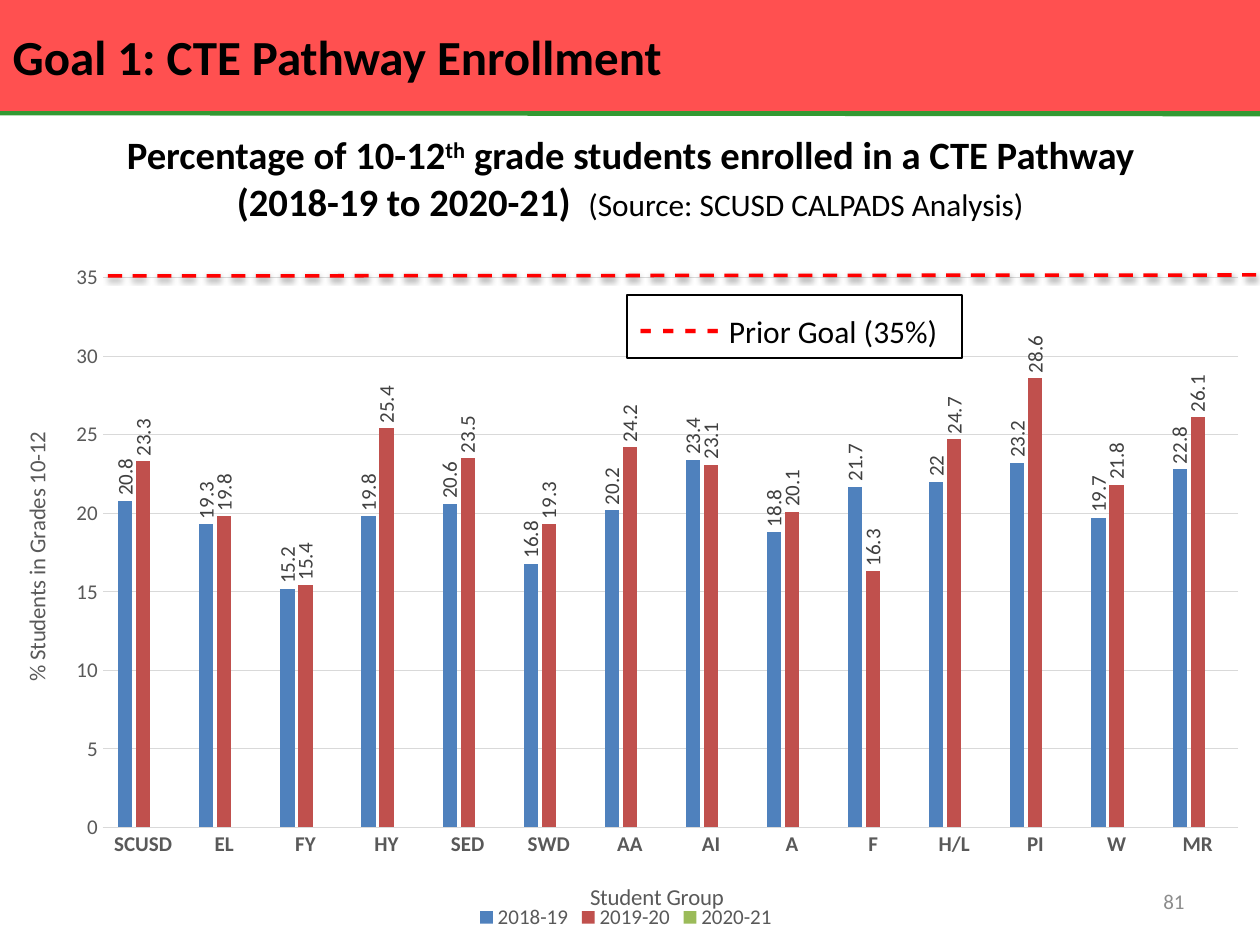
from lxml import etree
from pptx import Presentation
from pptx.chart.data import CategoryChartData
from pptx.dml.color import RGBColor
from pptx.enum.chart import XL_CHART_TYPE as CT, XL_LABEL_POSITION as LP
from pptx.enum.chart import XL_LEGEND_POSITION as LEG, XL_TICK_MARK as TM
from pptx.enum.dml import MSO_LINE
from pptx.enum.shapes import MSO_CONNECTOR as MC, MSO_SHAPE as MS
from pptx.enum.text import MSO_ANCHOR as MA, MSO_AUTO_SIZE as AS, PP_ALIGN as PA
from pptx.oxml import parse_xml
from pptx.oxml.ns import nsdecls, qn
from pptx.util import Pt

FONT = "Calibri"
TITLE = [[("Goal 1: CTE Pathway Enrollment", 28, "000000", True)]]
HEADING = [
    [("Percentage of 10-12", 22.1, "000000", True),
     ("th", 22.1, "000000", True, 30),
     (" grade students enrolled in a CTE Pathway", 22.1, "000000", True)],
    [("(2018-19 to 2020-21)  ", 22.1, "000000", True),
     ("(Source: SCUSD CALPADS Analysis)", 17.9, "000000", False)],
]
GOAL = [[("- - - - ", 24, "FF0000", True),
         ("Prior Goal (35%)", 18, "000000", False)]]
PAGE = [[("81", 12, "8C8C8C", False)]]
GROUPS = ["SCUSD", "EL", "FY", "HY", "SED", "SWD", "AA",
          "AI", "A", "F", "H/L", "PI", "W", "MR"]
YEARS = [
    ("2018-19", "4F81BD", [20.8, 19.3, 15.2, 19.8, 20.6, 16.8, 20.2,
                           23.4, 18.8, 21.7, 22, 23.2, 19.7, 22.8]),
    ("2019-20", "C0504D", [23.3, 19.8, 15.4, 25.4, 23.5, 19.3, 24.2,
                           23.1, 20.1, 16.3, 24.7, 28.6, 21.8, 26.1]),
    ("2020-21", "9BBB59", [None] * len(GROUPS)),
]
PLOT = (0.082, 0.077, 0.907, 0.772)


def px(n):
    return round(n * 914400 / 126)


def rgb(h):
    return RGBColor.from_string(h)


def style(font, size, color, bold=False):
    font.name, font.size, font.bold = FONT, Pt(size), bold
    font.color.rgb = rgb(color)


def write(tf, paras, align=PA.LEFT, anchor=MA.MIDDLE):
    tf.word_wrap, tf.auto_size, tf.vertical_anchor = True, AS.NONE, anchor
    for i, runs in enumerate(paras):
        p = tf.add_paragraph() if i else tf.paragraphs[0]
        p.alignment = align
        for text, size, color, bold, *base in runs:
            r = p.add_run()
            r.text = text
            style(r.font, size, color, bold)
            if base:
                r.font._element.set("baseline", str(base[0] * 1000))


def add_text(s, box, paras, align, anchor):
    write(s.shapes.add_textbox(*map(px, box)).text_frame, paras, align, anchor)


def add_line(s, ends, color, width):
    line = s.shapes.add_connector(MC.STRAIGHT, *map(px, ends))
    line.line.color.rgb, line.line.width = rgb(color), Pt(width)
    effects = etree.SubElement(line._element.spPr, qn("a:effectLst"))
    return line, effects


def layout(x, y, w=None, h=None):
    size = "" if w is None else f'<c:w val="{w}"/><c:h val="{h}"/>'
    inner = "" if w is None else '<c:layoutTarget val="inner"/>'
    return parse_xml(
        f'<c:layout {nsdecls("c")}><c:manualLayout>{inner}'
        '<c:xMode val="edge"/><c:yMode val="edge"/>'
        f'<c:x val="{x}"/><c:y val="{y}"/>{size}</c:manualLayout></c:layout>')


def set_layout(el, new, after=None):
    for old in el.findall(qn("c:layout")):
        el.remove(old)
    if after is None:
        el.insert(0, new)
    else:
        el.find(qn(after)).addnext(new)


def format_axis(axis, title, x, y, bold=False):
    axis.major_tick_mark = axis.minor_tick_mark = TM.NONE
    style(axis.tick_labels.font, 12, "595959", bold)
    tf = axis.axis_title.text_frame
    r = tf.paragraphs[0].add_run()
    r.text = title
    style(r.font, 13, "595959")
    set_layout(axis.axis_title._element, layout(x, y), "c:tx")
    return tf


def add_chart(s, box):
    data = CategoryChartData()
    data.categories = GROUPS
    for name, _, vals in YEARS:
        data.add_series(name, vals)
    chart = s.shapes.add_chart(CT.COLUMN_CLUSTERED, *map(px, box), data).chart
    chart.has_title = False
    style(chart.font, 10, "000000")
    chart.has_legend = True
    chart.legend.position, chart.legend.include_in_layout = LEG.BOTTOM, False
    style(chart.legend.font, 12, "595959")

    plot = chart.plots[0]
    plot.gap_width, plot.overlap, plot.vary_by_categories = 219, -27, False
    for ser, (_, color, _) in zip(plot.series, YEARS):
        ser.format.fill.solid()
        ser.format.fill.fore_color.rgb = rgb(color)
        labels = ser.data_labels
        labels.show_value, labels.position = True, LP.OUTSIDE_END
        style(labels.font, 12, "404040")
        body = labels._element.find(qn("c:txPr")).find(qn("a:bodyPr"))
        body.set("rot", "-5400000")
        body.set("vert", "horz")

    cat, val = chart.category_axis, chart.value_axis
    format_axis(cat, "Student Group", 0.468, 0.92, True)
    cat.format.line.color.rgb, cat.format.line.width = rgb("D9D9D9"), Pt(0.75)
    tf = format_axis(val, "% Students in Grades 10-12", 0.014, 0.288)
    tf._element.find(qn("a:bodyPr")).set("rot", "-5400000")
    val.minimum_scale, val.maximum_scale, val.major_unit = 0, 35, 5
    val.format.line.fill.background()
    grid = val.major_gridlines.format.line
    grid.color.rgb, grid.width = rgb("D9D9D9"), Pt(0.75)
    set_layout(chart._chartSpace.chart.plotArea, layout(*PLOT))


def main():
    prs = Presentation()
    prs.slide_width, prs.slide_height = px(1260), px(945)
    s = prs.slides.add_slide(prs.slide_layouts[5])

    rule, _ = add_line(s, (0, 111, 1260, 112), "339933", 5)
    title = s.shapes.title
    title._element.addprevious(rule._element)
    title.left, title.top, title.width, title.height = map(px, (0, 0, 1260, 111))
    title.fill.solid()
    title.fill.fore_color.rgb = rgb("FF5050")
    write(title.text_frame, TITLE)

    add_text(s, (903, 876, 294, 50), PAGE, PA.RIGHT, MA.MIDDLE)
    add_text(s, (20, 125, 1221, 92), HEADING, PA.CENTER, MA.TOP)
    add_chart(s, (0, 223, 1252, 712))

    goal, effects = add_line(s, (108, 276, 1260, 275), "FF0000", 2)
    goal.line.dash_style = MSO_LINE.DASH
    effects.append(parse_xml(
        f'<a:outerShdw {nsdecls("a")} blurRad="{Pt(3.1)}" dist="{Pt(1.6)}" '
        'dir="5400000" rotWithShape="0"><a:srgbClr val="000000">'
        '<a:alpha val="38000"/></a:srgbClr></a:outerShdw>'))

    key = s.shapes.add_shape(MS.RECTANGLE, *map(px, (627, 295, 335, 63)))
    key.shadow.inherit = False
    key.fill.solid()
    key.fill.fore_color.rgb = rgb("FFFFFF")
    key.line.color.rgb, key.line.width = rgb("000000"), Pt(0.75)
    write(key.text_frame, GOAL)
    prs.save("out.pptx")


if __name__ == "__main__":
    main()
